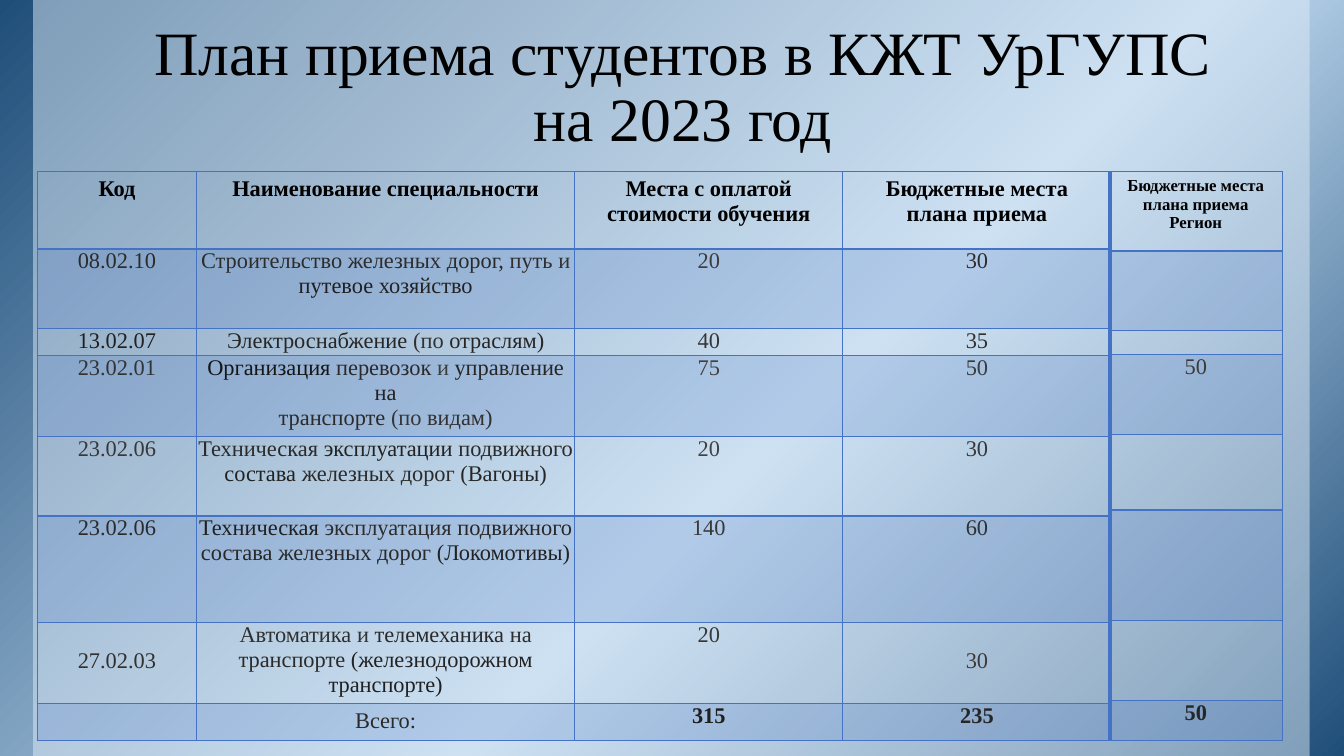
from copy import deepcopy

from lxml.etree import SubElement
from pptx import Presentation
from pptx.dml.color import RGBColor
from pptx.enum.shapes import MSO_SHAPE
from pptx.enum.text import MSO_ANCHOR, MSO_AUTO_SIZE, PP_ALIGN
from pptx.oxml import parse_xml
from pptx.oxml.ns import nsdecls, qn
from pptx.util import Inches, Pt

FONT = "Times New Roman"
BLUE = "4472C4"


def rgb(color):
    return RGBColor.from_string(color)


def fill_translucent(fill, element, color, percent):
    """Fill solidly with a colour at the given opacity; element holds the fill."""
    fill.solid()
    fill.fore_color.rgb = rgb(color)
    color_element = element.find(qn("a:solidFill"))[0]
    SubElement(color_element, qn("a:alpha"), val=str(percent * 1000))


presentation = Presentation()
presentation.slide_width = Inches(13.33)
presentation.slide_height = Inches(7.5)
slide = presentation.slides.add_slide(presentation.slide_layouts[5])

# Backdrop: diagonal gradient under a pale panel
backdrop = slide.shapes.add_shape(
    MSO_SHAPE.RECTANGLE, 0, 0, Inches(13.33), Inches(7.5))
backdrop.fill.gradient()
backdrop.fill.gradient_angle = 315
stop_list = backdrop._element.spPr.find(".//" + qn("a:gsLst"))
stop_list.insert(1, deepcopy(stop_list[0]))
gradient = [(0, "1F4E79"), (0.58, "BDD7EE"), (1, "1F4E79")]
for stop, (position, color) in zip(backdrop.fill.gradient_stops, gradient):
    stop.position = position
    stop.color.rgb = rgb(color)

panel = slide.shapes.add_shape(
    MSO_SHAPE.RECTANGLE, Inches(0.33), 0, Inches(12.66), Inches(7.5))
fill_translucent(panel.fill, panel._element.spPr, "DEEBF7", 50)
for shape in (backdrop, panel):
    shape.line.fill.background()
    shape.shadow.inherit = False

# Title, brought in front of the backdrop
title = slide.shapes.title
slide.shapes._spTree.append(title._element)
title.left, title.top = Inches(1.22), Inches(0.08)
title.width, title.height = Inches(11.11), Inches(1.53)
frame = title.text_frame
frame.text = "План приема студентов в КЖТ УрГУПС на 2023 год"
frame.word_wrap = True
frame.auto_size = MSO_AUTO_SIZE.NONE
frame.vertical_anchor = MSO_ANCHOR.BOTTOM
frame.margin_left = frame.margin_right = Inches(0.13)
frame.margin_top = frame.margin_bottom = Inches(0.07)
paragraph = frame.paragraphs[0]
paragraph.alignment = PP_ALIGN.CENTER
paragraph.line_spacing = 0.9
paragraph.font.name = FONT
paragraph.font.size = Pt(44)
paragraph.font.color.rgb = rgb("000000")

# A cell is a list of paragraphs, a paragraph a list of (text, colour) runs
plan_rows = [
    [[[(heading, "000000")]] for heading in (
        "Код", "Наименование специальности",
        "Места с оплатой стоимости обучения", "Бюджетные места плана приема")],
    [[[("08.02.10", "2B2B2B")]],
     [[("Строительство железных ", "2D2D2D"), ("дорог, ", "2A2A2A"),
       ("путь ", "2F2F2F"), ("и", "333333")],
      [("путевое ", "1F1F1F"), ("хозяйство", "232323")]],
     [[("20", "3D3D3D")]], [[("30", "2D2D2D")]]],
    [[[("13.02.07", "212121")]],
     [[("Электроснабжение ", "262626"), ("(по ", "313131"),
       ("отраслям)", "262626")]],
     [[("40", "363636")]], [[("35", "313131")]]],
    [[[("23.02.01", "333333")]],
     [[("Организация ", "161616"), ("перевозок ", "2A2A2A"), ("и ", "3D3D3D"),
       ("управление ", "262626"), ("на", "232323")],
      [("транспорте ", "2B2B2B"), ("(по ", "363636"), ("видам)", "313131")]],
     [[("75", "414141")]], [[("50", "3B3B3B")]]],
    [[[("23.02.06", "383838")]],
     [[("Техническая ", "2B2B2B"), ("эксплуатации ", "232323"),
       ("подвижного ", "2A2A2A"), ("состава ", "212121"),
       ("железных ", "2B2B2B"), ("дорог ", "2A2A2A"), ("(Вагоны)", "262626")]],
     [[("20", "424242")]], [[("30", "383838")]]],
    [[[("23.02.06", "2B2B2B")]],
     [[("Техническая ", "212121"), ("эксплуатация ", "2D2D2D"),
       ("подвижного", "282828")],
      [("состава ", "282828"), ("железных дорог ", "2A2A2A"),
       ("(Локомотивы)", "232323")]],
     [[("140", "383838")]], [[("60", "313131")]]],
    [[[("27.02.03", "313131")]],
     [[("Автоматика ", "2F2F2F"), ("и ", "313131"), ("телемеханика ", "2A2A2A"),
       ("на", "2D2D2D")],
      [("транспорте ", "2A2A2A"), ("(железнодорожном ", "232323"),
       ("транспорте)", "1F1F1F")]],
     [[("20", "383838")]], [[("30", "3B3B3B")]]],
    [[], [[("Всего:", "2A2A2A")]], [[("315", "1F1F1F")]], [[("235", "262626")]]],
]
region_rows = [
    [[[("Бюджетные места плана приема Регион", "000000")]]],
    [[]], [[]], [[[("50", "3B3B3B")]]], [[]], [[]], [[]],
    [[[("50", "262626")]]],
]
# left, column widths, row heights, heading size, rows
tables = [
    (0.37, [1.58, 3.75, 2.66, 2.66],
     [0.77, 0.79, 0.27, 0.8, 0.79, 1.06, 0.8, 0.37], 16, plan_rows),
    (11, [1.72], [0.79, 0.79, 0.24, 0.79, 0.75, 1.1, 0.79, 0.4], 12, region_rows),
]

for left, widths, heights, heading_size, rows in tables:
    table = slide.shapes.add_table(
        len(heights), len(widths), Inches(left), Inches(1.7),
        Inches(sum(widths)), Inches(sum(heights))).table
    table.first_row = table.horz_banding = False
    for column, width in zip(table.columns, widths):
        column.width = Inches(width)
    for row, height in zip(table.rows, heights):
        row.height = Inches(height)

    for row_index, row in enumerate(rows):
        is_heading = row_index == 0
        is_total = row_index == len(rows) - 1
        for column_index, content in enumerate(row):
            cell = table.cell(row_index, column_index)
            is_total_label = is_total and column_index == 1
            if not is_heading:
                cell.margin_left = cell.margin_right = 0
                cell.margin_top = cell.margin_bottom = 0
            if is_total_label:
                cell.margin_top = Inches(0.05)
            if row_index == 6 and column_index in (0, 3):
                cell.margin_top = Inches(0.25)

            frame = cell.text_frame
            for index, runs in enumerate(content or [[]]):
                paragraph = frame.add_paragraph() if index else frame.paragraphs[0]
                paragraph.alignment = PP_ALIGN.CENTER
                paragraph.font.name = FONT
                paragraph.font.size = Pt(
                    heading_size if is_heading else 16 if content else 12)
                paragraph.font.bold = is_heading or is_total and not is_total_label
                for text, color in runs:
                    run = paragraph.add_run()
                    run.text = text
                    run.font.color.rgb = rgb(color)

            properties = cell._tc.get_or_add_tcPr()
            if row_index % 2:
                fill_translucent(cell.fill, properties, BLUE, 20)
            else:
                cell.fill.background()
            for position, side in enumerate("LRTB"):
                thick = (row_index, side) in ((0, "B"), (1, "T"))
                properties.insert(position, parse_xml(
                    f'<a:ln{side} {nsdecls("a")} w="{Pt(2 if thick else 1)}">'
                    f'<a:solidFill><a:srgbClr val="{BLUE}"/></a:solidFill>'
                    f'</a:ln{side}>'))

presentation.save("out.pptx")
